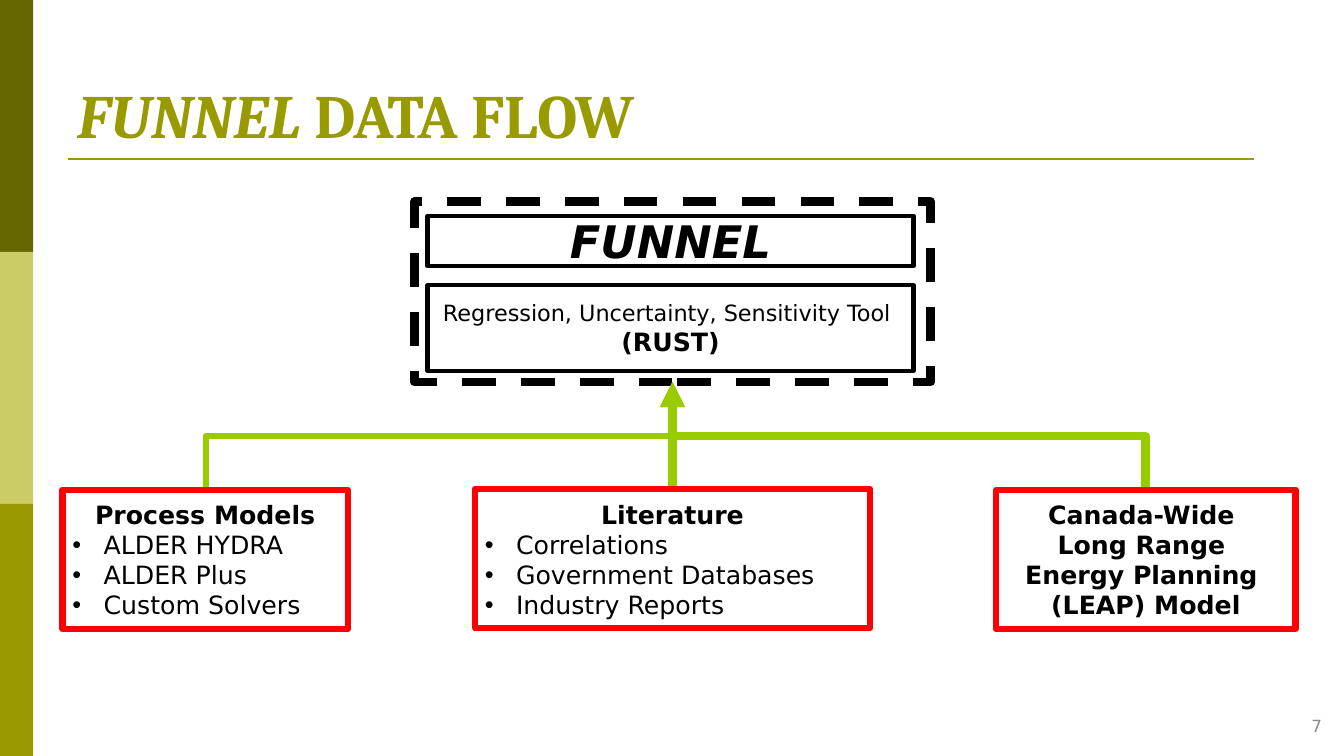
"""Build the FUNNEL data flow slide."""
from dataclasses import dataclass
from typing import Any, Optional

from lxml import etree
from pptx import Presentation
from pptx import util as u
from pptx.dml.color import RGBColor
from pptx.enum import dml, shapes, text
from pptx.oxml import ns

BODY_FONT = "DejaVu Sans"
OLIVE, GREEN, RED, BLACK = "999900", "99CC00", "FF0000", "000000"
BAR_COLORS = ("666600", "CCCC66", OLIVE)
BAR_WIDTH, BAR_HEIGHT = 0.33, 2.5
HUB_X, HUB_BOTTOM = 6.67, 3.79
SOURCE_TOP, SOURCE_HEIGHT = 4.86, 1.38
BULLET_INDENT = 0.31


@dataclass(frozen=True)
class Run:
    words: str
    size: float = 18
    bold: bool = False
    italic: bool = False
    color: str = BLACK
    font: str = BODY_FONT


@dataclass(frozen=True)
class Line:
    runs: tuple[Run, ...]
    align: text.PP_ALIGN = text.PP_ALIGN.CENTER
    bullet: bool = False


@dataclass(frozen=True)
class Box:
    left: float
    top: float
    width: float
    height: float
    lines: tuple[Line, ...] = ()
    outline: Optional[str] = BLACK
    weight: float = 3
    fill: Optional[str] = None
    dash: Optional[dml.MSO_LINE] = None
    anchor: text.MSO_ANCHOR = text.MSO_ANCHOR.MIDDLE


@dataclass(frozen=True)
class Source:
    left: float
    width: float
    frame_top: float
    lines: tuple[Line, ...]


@dataclass(frozen=True)
class Elbow:
    start_x: float
    weight: float
    rotation: int


def rgb(color: str) -> RGBColor:
    return RGBColor.from_string(color)


def apply(target: Any, values: dict[str, Any]) -> None:
    for name, value in values.items():
        setattr(target, name, value)


def centered(*words: str) -> tuple[Line, ...]:
    return tuple(Line((Run(item, bold=True),)) for item in words)


def bulleted(*words: str) -> tuple[Line, ...]:
    return tuple(Line((Run(item),), text.PP_ALIGN.LEFT, True) for item in words)


def add_bullet(paragraph: Any) -> None:
    properties = paragraph._p.get_or_add_pPr()
    indent = u.Inches(BULLET_INDENT)
    properties.set("marL", str(indent))
    properties.set("indent", str(-indent))
    font = etree.SubElement(properties, ns.qn("a:buFont"))
    font.set("typeface", "Arial")
    etree.SubElement(properties, ns.qn("a:buChar")).set("char", "•")


def write_lines(frame: Any, lines: tuple[Line, ...], anchor: text.MSO_ANCHOR) -> None:
    apply(frame, {"word_wrap": True, "vertical_anchor": anchor})
    for index, line in enumerate(lines):
        paragraph = frame.add_paragraph() if index else frame.paragraphs[0]
        paragraph.alignment = line.align
        if line.bullet:
            add_bullet(paragraph)
        for item in line.runs:
            run = paragraph.add_run()
            run.text = item.words
            apply(run.font, {"name": item.font, "size": u.Pt(item.size),
                             "bold": item.bold, "italic": item.italic})
            run.font.color.rgb = rgb(item.color)


def add_box(slide: Any, box: Box) -> None:
    place = [u.Inches(value) for value in (box.left, box.top, box.width, box.height)]
    if box.outline is None and box.fill is None:
        shape = slide.shapes.add_textbox(*place)
    else:
        shape = slide.shapes.add_shape(shapes.MSO_SHAPE.RECTANGLE, *place)
        shape.shadow.inherit = False
        if box.fill:
            shape.fill.solid()
            shape.fill.fore_color.rgb = rgb(box.fill)
        else:
            shape.fill.background()
        if box.outline:
            shape.line.color.rgb = rgb(box.outline)
            apply(shape.line, {"width": u.Pt(box.weight), "dash_style": box.dash})
        else:
            shape.line.fill.background()
    if box.lines:
        write_lines(shape.text_frame, box.lines, box.anchor)


def add_line(slide: Any, kind: shapes.MSO_CONNECTOR, ends: tuple[float, ...],
             color: str, weight: float, arrow: bool = False) -> Any:
    connector = slide.shapes.add_connector(kind, *(u.Inches(value) for value in ends))
    connector.line.color.rgb = rgb(color)
    connector.line.width = u.Pt(weight)
    properties = connector._element.spPr
    if arrow:
        outline = properties.find(ns.qn("a:ln"))
        etree.SubElement(outline, ns.qn("a:tailEnd")).set("type", "triangle")
    etree.SubElement(properties, ns.qn("a:effectLst"))
    return connector


def add_elbow(slide: Any, elbow: Elbow) -> None:
    center_x = (elbow.start_x + HUB_X) / 2
    center_y = (SOURCE_TOP + HUB_BOTTOM) / 2
    half_rise = (SOURCE_TOP - HUB_BOTTOM) / 2
    half_span = abs(elbow.start_x - HUB_X) / 2
    side = half_rise if elbow.rotation == 90 else -half_rise
    ends = (center_x + side, center_y + half_span, center_x - side, center_y - half_span)
    connector = add_line(slide, shapes.MSO_CONNECTOR.ELBOW, ends, GREEN, elbow.weight, True)
    transform = connector._element.spPr.find(ns.qn("a:xfrm"))
    transform.set("rot", str(elbow.rotation * 60000))


TITLE = Line((Run("FUNNEL", 44, True, True, OLIVE, "Cambria"),
              Run(" DATA FLOW", 44, True, False, OLIVE, "Cambria")), text.PP_ALIGN.LEFT)
PAGE_NUMBER = Line((Run("7", 12, color="8C8C8C"),), text.PP_ALIGN.RIGHT)
TEXT_BOXES = (
    Box(0.67, 0.3, 10.56, 1.25, (TITLE,), None, anchor=text.MSO_ANCHOR.BOTTOM),
    Box(12.32, 7, 0.89, 0.4, (PAGE_NUMBER,), None),
)
HUB_BOXES = (
    Box(4.11, 2, 5.12, 1.79, weight=6, dash=dml.MSO_LINE.DASH),
    Box(4.24, 2.83, 4.82, 0.85, (
        Line((Run("Regression, Uncertainty, Sensitivity Tool ", 16),)),
        *centered("(RUST)"))),
    Box(4.24, 2.14, 4.82, 0.5, (Line((Run("FUNNEL", 32, True, True),)),)),
)
SOURCES = (
    Source(0.62, 2.83, 4.86, centered("Process Models")
           + bulleted("ALDER HYDRA", "ALDER Plus", "Custom Solvers")),
    Source(4.71, 3.92, 4.85, centered("Literature")
           + bulleted("Correlations", "Government Databases", "Industry Reports")),
    Source(9.88, 2.97, 4.86, centered("Canada-Wide ", "Long Range ",
                                      "Energy Planning ", "(LEAP) Model")),
)
ELBOWS = (Elbow(2.04, 4.5, 90), Elbow(11.36, 6, 270))


def main() -> None:
    presentation = Presentation()
    apply(presentation, {"slide_width": u.Inches(13.33), "slide_height": u.Inches(7.5)})
    slide = presentation.slides.add_slide(presentation.slide_layouts[6])
    for index, color in enumerate(BAR_COLORS):
        add_box(slide, Box(0, index * BAR_HEIGHT, BAR_WIDTH, BAR_HEIGHT,
                           outline=None, fill=color))
    straight = shapes.MSO_CONNECTOR.STRAIGHT
    add_line(slide, straight, (0.67, 1.58, 12.44, 1.58), OLIVE, 1.5)
    for box in TEXT_BOXES + HUB_BOXES:
        add_box(slide, box)
    for source in SOURCES:
        add_box(slide, Box(source.left, SOURCE_TOP, source.width, SOURCE_HEIGHT,
                           source.lines, GREEN))
    add_line(slide, straight, (HUB_X, SOURCE_TOP, HUB_X, HUB_BOTTOM), GREEN, 6, True)
    for elbow in ELBOWS:
        add_elbow(slide, elbow)
    for source in SOURCES:
        add_box(slide, Box(source.left, source.frame_top, source.width, SOURCE_HEIGHT,
                           outline=RED, weight=4.5))
    presentation.save("out.pptx")


if __name__ == "__main__":
    main()
